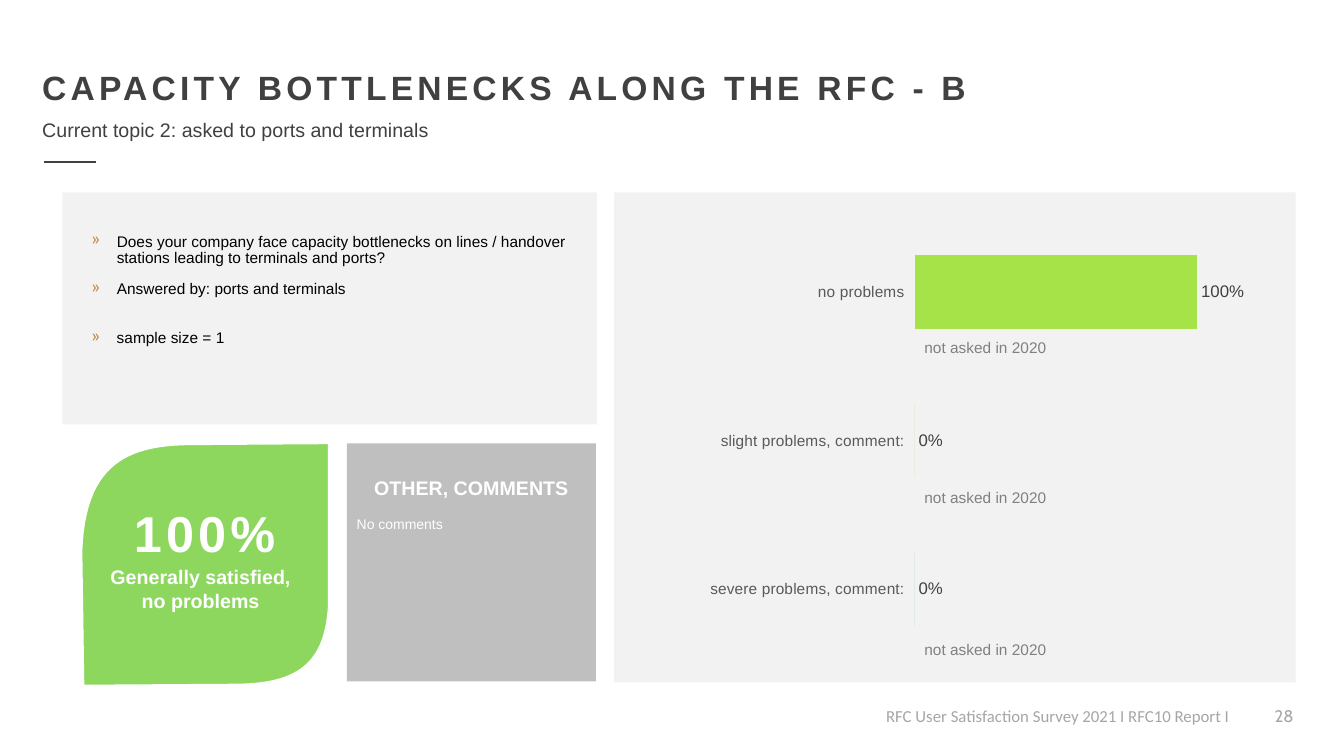
from pptx import Presentation
from pptx.chart.data import CategoryChartData
from pptx.dml.color import RGBColor
from pptx.enum.chart import XL_CHART_TYPE, XL_LABEL_POSITION, XL_TICK_LABEL_POSITION, XL_TICK_MARK
from pptx.enum.shapes import MSO_CONNECTOR, MSO_SHAPE
from pptx.enum.text import MSO_ANCHOR, PP_ALIGN
from pptx.oxml import parse_xml
from pptx.oxml.ns import nsdecls
from pptx.util import Pt
from lxml.etree import SubElement

PX = 9144
HEX = {"dark": "404040", "panel": "F2F2F2", "gray": "BFBFBF", "mid": "808080",
       "label": "595959", "foot": "A6A6A6", "white": "FFFFFF", "black": "000000",
       "gold": "BF873D", "leaf": "8DD75F"}
LEFT, MID, RIGHT = PP_ALIGN.LEFT, PP_ALIGN.CENTER, PP_ALIGN.RIGHT

PANELS = [((62, 191, 530, 230), "panel"), ((609, 191, 676, 486), "panel"),
          ((344, 440, 247, 236), "gray")]
TEXTS = [
    (["28"], (1231, 695, 62, 40), 12, "foot", "Cabin", False, RIGHT, 0, True),
    (["RFC User Satisfaction Survey 2021 I RFC10 Report I"], (869, 695, 380, 30),
     12, "foot", "Calibri", False, LEFT, 0, False),
    (["CAPACITY BOTTLENECKS ALONG THE RFC - B"], (32, 61, 1211, 50),
     24, "dark", "Arial", True, LEFT, 3, True),
    (["Current topic 2: asked to ports and terminals"], (32, 112, 405, 34),
     14, "dark", "Arial", False, LEFT, 0, False),
    (["100%"], (120, 493, 166, 71), 36, "white", "Arial", True, MID, 3, False),
    (["Generally satisfied,", "no problems"], (99, 556, 200, 57),
     14, "white", "Arial", True, MID, 0, False),
]
BULLETS = [
    (["Does your company face capacity bottlenecks on lines / handover stations "
      "leading to terminals and ports?", "Answered by: ports and terminals"],
     (81, 227, 495, 82)),
    (["sample size = 1"], (81, 323, 227, 33)),
]
COMMENTS = ["OTHER, COMMENTS", "No comments"]
BARS = [("no problems", 1, "A5E348"), ("slight problems, comment:", 0, "8DD75F"),
        ("severe problems, comment:", 0, "63C08C")]
NOTE, NOTE_TOPS = "not asked in 2020", [330, 479, 630]
LEAF = [[(83, 680)], [(81, 547)], [(84, 464), (122, 442), (186, 441)], [(326, 440)],
        [(326, 600)], [(323, 657), (297, 678), (237, 679)]]

deck = Presentation()
deck.slide_width, deck.slide_height = 1333 * PX, 750 * PX
slide = deck.slides.add_slide(deck.slide_layouts[6])
shapes = slide.shapes


def rgb(key):
    return RGBColor.from_string(HEX.get(key, key))


def emu(box):
    return [n * PX for n in box]


def style(font, size, color, face="Arial", bold=False):
    font.size, font.name, font.bold = Pt(size), face, bold
    font.color.rgb = rgb(color)


def write(frame, lines, size, color, face="Arial", bold=False, align=LEFT, gap=0, wrap=True):
    frame.word_wrap = wrap
    frame.text = "\n".join(lines)
    for para in frame.paragraphs:
        para.alignment = align
        for run in para.runs:
            style(run.font, size, color, face, bold)
            if gap:
                run.font._element.set("spc", str(gap * 100))


def text(lines, box, *look):
    frame = shapes.add_textbox(*emu(box)).text_frame
    write(frame, lines, *look)
    return frame


def panel(box, color):
    shape = shapes.add_shape(MSO_SHAPE.RECTANGLE, *emu(box))
    shape.shadow.inherit = False
    shape.fill.solid()
    shape.fill.fore_color.rgb = rgb(color)
    shape.line.fill.background()
    return shape


def bullet(para):
    para.line_spacing, para.space_before = 0.9, Pt(10)
    props = para._p.get_or_add_pPr()
    props.set("marL", str(25 * PX))
    props.set("indent", str(-25 * PX))
    color = parse_xml(f'<a:buClr {nsdecls("a")}><a:srgbClr val="{HEX["gold"]}"/></a:buClr>')
    mark = parse_xml(f'<a:buChar {nsdecls("a")} char="»"/>')
    props.extend([color, mark])


def curve(a, b, c, d, steps=24):
    for i in range(1, steps + 1):
        t = i / steps
        u = 1 - t
        yield tuple(u**3 * p + 3 * u * u * t * q + 3 * u * t * t * r + t**3 * s
                    for p, q, r, s in zip(a, b, c, d))


def leaf():
    dots = []
    for part in LEAF:
        dots += curve(dots[-1], *part) if len(part) == 3 else part
    dots = [(x * PX, y * PX) for x, y in dots]
    form = shapes.build_freeform(*dots[0])
    form.add_line_segments(dots[1:], close=True)
    shape = form.convert_to_shape()
    shape.shadow.inherit = False
    shape.fill.solid()
    shape.fill.fore_color.rgb = rgb("leaf")
    shape.line.color.rgb = rgb("white")
    shape.line.width = Pt(1)


def graph():
    data = CategoryChartData(number_format="0%")
    data.categories = [name for name, _, _ in BARS]
    data.add_series("Series 1", [value for _, value, _ in BARS])
    chart = shapes.add_chart(XL_CHART_TYPE.BAR_CLUSTERED, *emu((633, 202, 623, 470)), data).chart
    chart.has_legend = chart.has_title = False
    style(chart.font, 10, "black")
    cats, vals = chart.category_axis, chart.value_axis
    cats.reverse_order = True
    cats.format.line.fill.background()
    cats.major_tick_mark = XL_TICK_MARK.OUTSIDE
    cats.tick_label_position = XL_TICK_LABEL_POSITION.LOW
    style(cats.tick_labels.font, 11, "label")
    vals.minimum_scale, vals.maximum_scale = 0, 1.2
    vals.has_major_gridlines = vals.visible = False
    plot = chart.plots[0]
    plot.gap_width, plot.vary_by_categories = 100, False
    plot.has_data_labels = True
    tags = plot.data_labels
    tags.show_value, tags.position = True, XL_LABEL_POSITION.OUTSIDE_END
    tags.number_format, tags.number_format_is_linked = "0%", False
    style(tags.font, 12, "dark")
    row = plot.series[0]
    row.invert_if_negative = False
    for i, (_, _, color) in enumerate(BARS):
        fill = row.points[i].format.fill
        fill.solid()
        fill.fore_color.rgb = rgb(color)
    sides = {"x": 0.44, "y": 0.03, "w": 0.54, "h": 0.94}
    rules = [("layoutTarget", "inner"), ("xMode", "edge"), ("yMode", "edge"), *sides.items()]
    inner = "".join(f'<c:{tag} val="{val}"/>' for tag, val in rules)
    area = chart._chartSpace.chart.plotArea
    for old in area.findall("{*}layout"):
        area.remove(old)
    area.insert(0, parse_xml(
        f'<c:layout {nsdecls("c")}><c:manualLayout>{inner}</c:manualLayout></c:layout>'))


def main():
    for box, color in PANELS:
        panel(box, color)
    rule = shapes.add_connector(MSO_CONNECTOR.STRAIGHT, *emu((44, 161, 95, 161)))
    rule.line.color.rgb, rule.line.width = rgb("dark"), Pt(1.5)
    SubElement(rule._element.spPr, "{http://schemas.openxmlformats.org/drawingml/2006/main}effectLst")
    graph()
    leaf()
    for item in TEXTS:
        text(*item)
    for lines, box in BULLETS:
        for para in text(lines, box, 11, "black").paragraphs:
            bullet(para)
    head, body = text(COMMENTS, (344, 467, 247, 67), 14, "white", "Arial", True, MID).paragraphs
    body.alignment, body.space_before = LEFT, Pt(11.5)
    style(body.runs[0].font, 10, "white")
    for top in NOTE_TOPS:
        frame = panel((907, top, 223, 29), "panel").text_frame
        frame.vertical_anchor = MSO_ANCHOR.MIDDLE
        write(frame, [NOTE], 11, "mid")
    deck.save("out.pptx")


if __name__ == "__main__":
    main()
